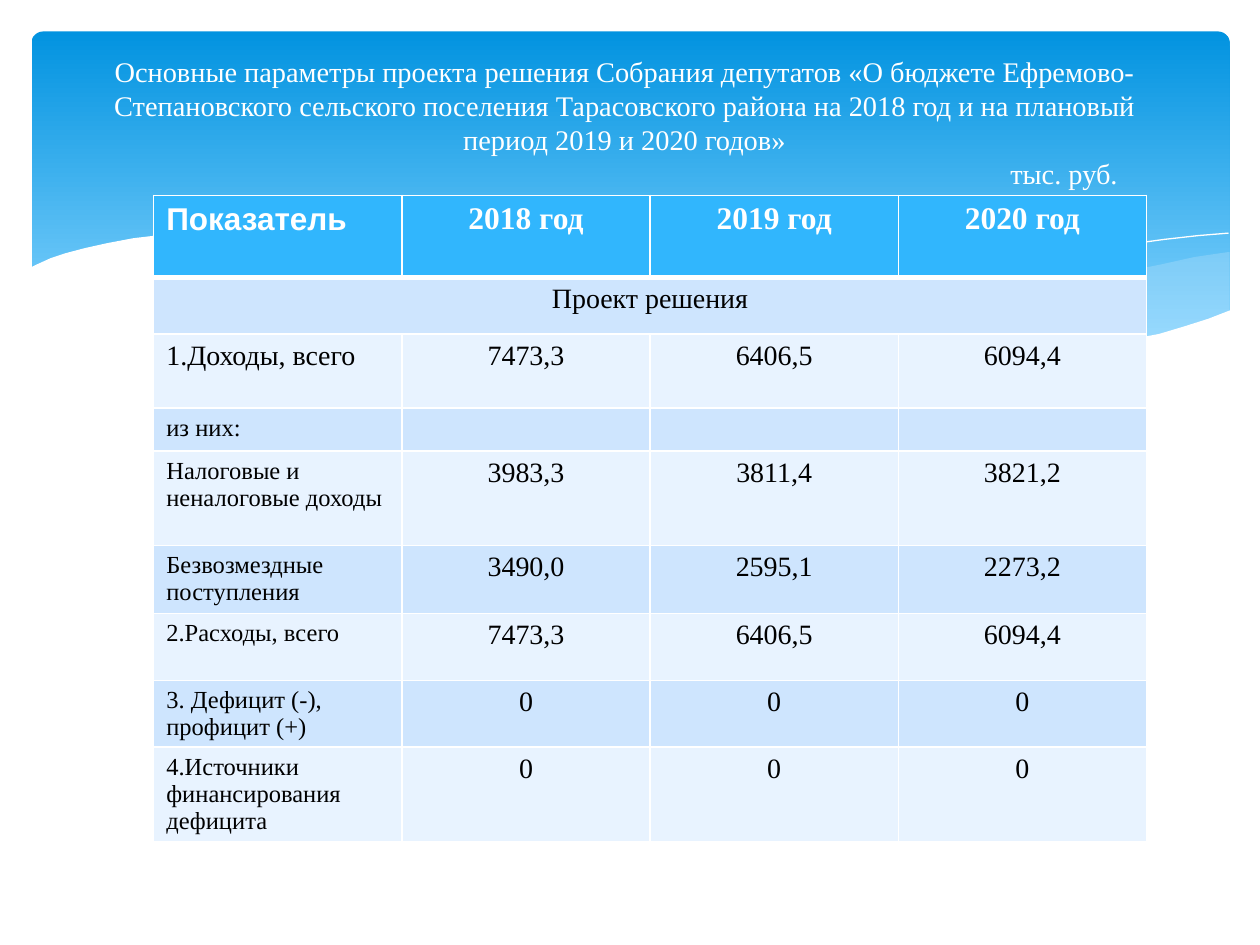
from lxml.etree import SubElement
from pptx import Presentation
from pptx.dml.color import RGBColor
from pptx.enum.shapes import MSO_SHAPE as Shape
from pptx.enum.text import MSO_ANCHOR as Anchor, PP_ALIGN as Align
from pptx.oxml.ns import qn
from pptx.util import Inches, Pt

INK = {"white": "FFFFFF", "black": "000000", "sky": "0293E0", "pale": "83D3FE",
       "mist": "C6E7FC", "head": "31B6FD", "dark": "CEE5FE", "light": "E8F3FF"}
SERIF = "Times New Roman"

TITLE = ("Основные параметры проекта решения Собрания депутатов «О бюджете "
         "Ефремово-Степановского сельского поселения Тарасовского района на 2018 год "
         "и на плановый период 2019 и 2020 годов»")
UNIT = "тыс. руб."

HEAD = ["Показатель", "2018 год", "2019 год", "2020 год"]
BAND = "Проект решения"
# Label, label size, yearly values
ROWS = [
    ("1.Доходы, всего", 16, ["7473,3", "6406,5", "6094,4"]),
    ("из них:", 14, ["", "", ""]),
    ("Налоговые и неналоговые доходы", 14, ["3983,3", "3811,4", "3821,2"]),
    ("Безвозмездные поступления", 14, ["3490,0", "2595,1", "2273,2"]),
    ("2.Расходы, всего", 14, ["7473,3", "6406,5", "6094,4"]),
    ("3. Дефицит (-), профицит (+)", 14, ["0", "0", "0"]),
    ("4.Источники финансирования дефицита", 14, ["0", "0", "0"]),
]
HIGH = [0.65, 0.45, 0.59, 0.34, 0.75, 0.54, 0.53, 0.53, 0.75]
WIDE = 1.97

# Waves: points, fill opacity in percent (None for an open white line)
WAVES = [
    ([(9.75, 2), (9.48, 2.04), (9.21, 2.1), (8.91, 2.16), (8.61, 2.23), (8.05, 2.37),
      (7.53, 2.48), (7.06, 2.57), (6.61, 2.65), (6.91, 2.69), (7.19, 2.72), (7.45, 2.75),
      (7.69, 2.77), (8.03, 2.78), (8.35, 2.77), (8.63, 2.75), (8.89, 2.72), (9.13, 2.67),
      (9.35, 2.62), (9.49, 2.57), (9.63, 2.52), (9.76, 2.47), (9.76, 2)], 29),
    ([(8.93, 2.73), (8.66, 2.69), (8.07, 2.6), (7.41, 2.47), (6.68, 2.31), (6.29, 2.22),
      (5.84, 2.11), (5.41, 2.03), (5.02, 1.96), (4.65, 1.91), (4.2, 1.87), (3.8, 1.85),
      (3.44, 1.86), (3.13, 1.88), (2.86, 1.91), (3.23, 1.96), (3.62, 2.03), (4.04, 2.11),
      (4.49, 2.22), (4.91, 2.32), (5.3, 2.4), (5.66, 2.48), (6.01, 2.55), (6.34, 2.61),
      (6.65, 2.66), (6.95, 2.7), (7.22, 2.74), (7.48, 2.76), (7.85, 2.78), (8.28, 2.78),
      (8.57, 2.77), (8.76, 2.75)], 40),
    ([(3.09, 1.95), (3.28, 1.92), (3.53, 1.89), (3.87, 1.87), (4.33, 1.87), (4.69, 1.89),
      (5.1, 1.92), (5.56, 1.97), (6.08, 2.04), (6.65, 2.13), (7.27, 2.26), (7.95, 2.41),
      (8.69, 2.61), (9.07, 2.72)], None),
    ([(6.13, 2.57), (6.53, 2.46), (6.95, 2.35), (7.48, 2.23), (8.06, 2.1), (8.66, 1.99),
      (8.95, 1.94), (9.24, 1.9), (9.51, 1.87), (9.75, 1.85)], None),
    ([(9.77, 2.46), (9.59, 2.53), (9.4, 2.59), (9.2, 2.65), (8.99, 2.69), (8.75, 2.73),
      (8.5, 2.75), (8.09, 2.77), (7.78, 2.76), (7.44, 2.74), (7.08, 2.7), (6.68, 2.65),
      (6.26, 2.58), (5.79, 2.5), (5.29, 2.39), (4.75, 2.27), (4.18, 2.13), (3.65, 2.02),
      (3.16, 1.94), (2.71, 1.88), (2.3, 1.85), (1.93, 1.84), (1.61, 1.84), (1.32, 1.86),
      (1.06, 1.89), (0.85, 1.93), (0.67, 1.97), (0.52, 2.01), (0.4, 2.05), (0.29, 2.1),
      (0.23, 2.13), (0.23, 3.29), (9.77, 3.29)], 100),
]


def rgb(name):
    return RGBColor.from_string(INK[name])


def write(para, text, size, ink, face=SERIF, bold=False, align=Align.CENTER):
    para.alignment = align
    if not text:
        SubElement(para._p, qn("a:endParaRPr"), sz=str(size * 100))
        return
    run = para.add_run()
    run.text = text
    font = run.font
    font.size, font.name, font.bold = Pt(size), face, bold
    font.color.rgb = rgb(ink)


def wave(slide, points, alpha):
    spots = [(Inches(x), Inches(y)) for x, y in points]
    pen = slide.shapes.build_freeform(*spots[0])
    pen.add_line_segments(spots[1:], close=alpha is not None)
    shape = pen.convert_to_shape()
    shape.shadow.inherit = False
    if alpha is None:
        shape.fill.background()
        shape.line.color.rgb = rgb("white")
        shape.line.width = Pt(0)
        return
    shape.line.fill.background()
    shape.fill.solid()
    shape.fill.fore_color.rgb = rgb("white" if alpha == 100 else "mist")
    if alpha < 100:
        tone = shape._element.spPr.find(qn("a:solidFill"))[0]
        SubElement(tone, qn("a:alpha"), val=str(alpha * 1000))


def paint(cell, ink, top=1, foot=1):
    props = cell._tc.get_or_add_tcPr()
    for side, width in (("L", 1), ("R", 1), ("T", top), ("B", foot)):
        line = SubElement(props, qn(f"a:ln{side}"), w=str(Pt(width)))
        fill = SubElement(line, qn("a:solidFill"))
        SubElement(fill, qn("a:srgbClr"), val=INK["white"])
    cell.fill.solid()
    cell.fill.fore_color.rgb = rgb(ink)


def main():
    deck = Presentation()
    deck.slide_width, deck.slide_height = Inches(10), Inches(7.5)
    slide = deck.slides.add_slide(deck.slide_layouts[6])

    # Blue panel with waves
    panel = slide.shapes.add_shape(Shape.ROUNDED_RECTANGLE, Inches(0.25), Inches(0.25),
                                   Inches(9.51), Inches(2.7))
    panel.adjustments[0] = 0.034
    panel.shadow.inherit = False
    panel.line.fill.background()
    panel.fill.gradient()
    panel.fill.gradient_angle = 270
    for stop, ink, place in zip(panel.fill.gradient_stops, ("sky", "pale"), (0, 0.9)):
        stop.color.rgb = rgb(ink)
        stop.position = place
    for points, alpha in WAVES:
        wave(slide, points, alpha)

    # Budget table
    table = slide.shapes.add_table(len(HIGH), len(HEAD), Inches(1.22), Inches(1.55),
                                   Inches(WIDE * len(HEAD)), Inches(sum(HIGH))).table
    for col in table.columns:
        col.width = Inches(WIDE)
    for row, high in zip(table.rows, HIGH):
        row.height = Inches(high)
    for r in range(len(HIGH)):
        ink = "head" if r == 0 else "dark" if r % 2 else "light"
        for c in range(len(HEAD)):
            paint(table.cell(r, c), ink, 3 if r == 1 else 1, 3 if r == 0 else 1)

    def put(r, c, text, size, ink="black", **look):
        write(table.cell(r, c).text_frame.paragraphs[0], text, size, ink, **look)

    put(0, 0, HEAD[0], 18, "white", face="Arial", bold=True, align=Align.LEFT)
    for c, year in enumerate(HEAD[1:], 1):
        put(0, c, year, 18, "white", bold=True)
    table.cell(1, 0).merge(table.cell(1, len(HEAD) - 1))
    put(1, 0, BAND, 16)
    for r, (label, size, values) in enumerate(ROWS, 2):
        put(r, 0, label, size, align=Align.LEFT)
        for c, value in enumerate(values, 1):
            put(r, c, value, 16 if value else 14)

    # Title with the unit below it
    frame = slide.shapes.add_textbox(Inches(0.5), Inches(0.55),
                                     Inches(8.91), Inches(0.84)).text_frame
    frame.word_wrap = True
    frame.vertical_anchor = Anchor.MIDDLE
    write(frame.paragraphs[0], TITLE, 16.2, "white")
    unit = frame.add_paragraph()
    write(unit, UNIT, 16.2, "white", align=Align.LEFT)
    unit._p.get_or_add_pPr().set("marL", str(Inches(7.42)))

    deck.save("out.pptx")


if __name__ == "__main__":
    main()
